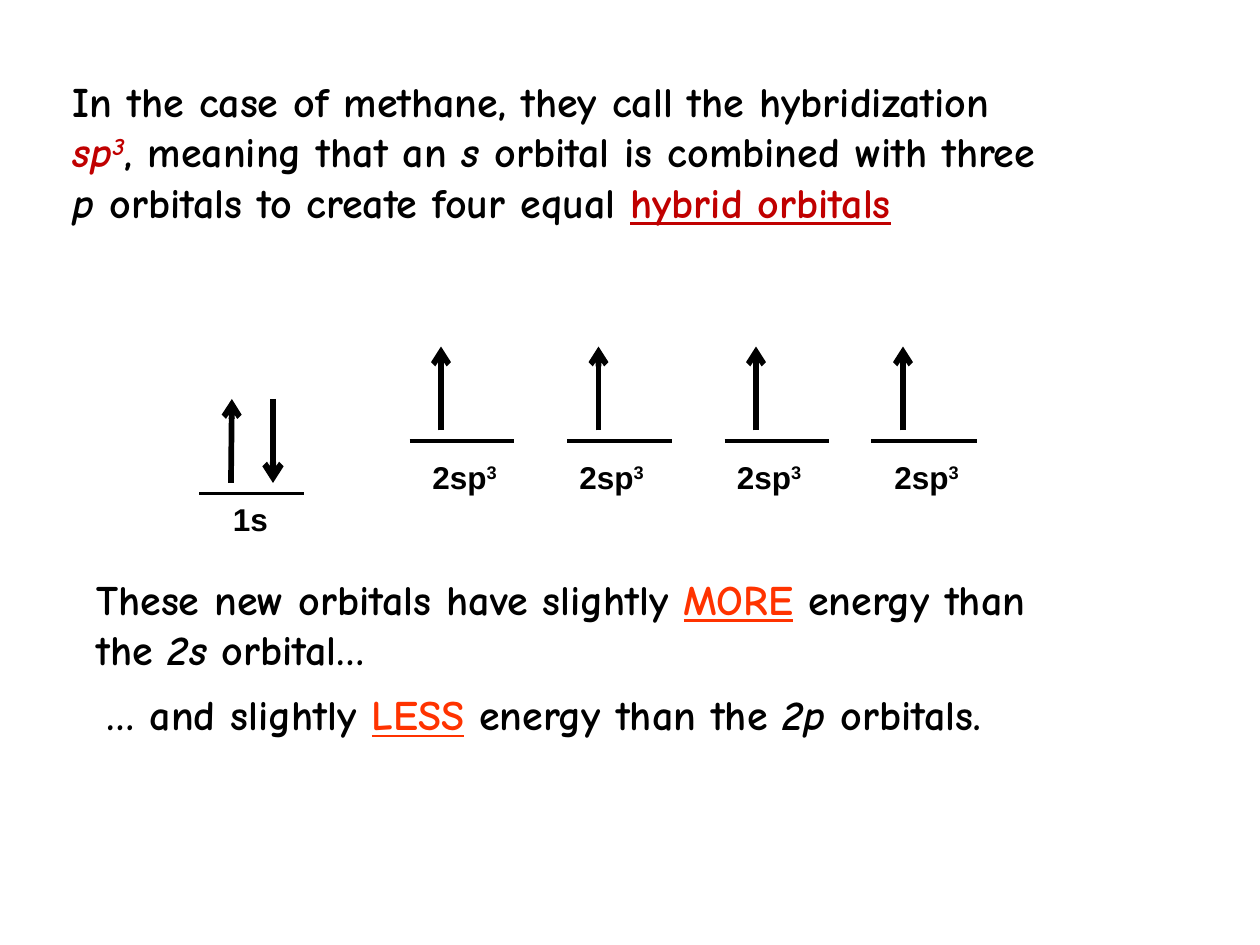
"""Build a slide on the sp³ hybrid orbitals of methane."""
from lxml import etree
from pptx import Presentation
from pptx.dml.color import RGBColor
from pptx.enum.shapes import MSO_CONNECTOR
from pptx.oxml.ns import qn
from pptx.util import Pt

STRAIGHT = MSO_CONNECTOR.STRAIGHT
COLORS = {"ink": "000000", "term": "C00000", "contrast": "FF3300"}


def add_text(box, font_name, size, lines):
    frame = slide.shapes.add_textbox(*[Pt(length) for length in box]).text_frame
    frame.word_wrap = True
    for index, line in enumerate(lines):
        paragraph = frame.paragraphs[0] if index == 0 else frame.add_paragraph()
        paragraph.font.name = font_name
        paragraph.font.size = Pt(size)
        paragraph.font.bold = True
        for text, color, *styles in line:
            run = paragraph.add_run()
            run.text = text
            run.font.color.rgb = RGBColor.from_string(COLORS[color])
            if "italic" in styles:
                run.font.italic = True
            if "underline" in styles:
                run.font.underline = True
            if "super" in styles:
                run.font.size = Pt(size)
                run._r.get_or_add_rPr().set("baseline", "30000")


def add_line(x1, y1, x2, y2, width, arrow=False):
    line = slide.shapes.add_connector(STRAIGHT, Pt(x1), Pt(y1), Pt(x2), Pt(y2))
    line.line.color.rgb = RGBColor.from_string(COLORS["ink"])
    line.line.width = Pt(width)
    if arrow:
        etree.SubElement(line.line._get_or_add_ln(), qn("a:tailEnd"), type="arrow")
    etree.SubElement(line._element.spPr, qn("a:effectLst"))


presentation = Presentation()
presentation.slide_width = Pt(720)
presentation.slide_height = Pt(540)
slide = presentation.slides.add_slide(presentation.slide_layouts[6])

add_text((34.5, 39.6, 647, 94.5), "Comic Neue", 24, [
    [("In the case of methane, they call the hybridization", "ink")],
    [("sp", "term", "italic"), ("3", "term", "italic", "super"),
     (", meaning that an ", "ink"), ("s", "ink", "italic"),
     (" orbital is combined with three", "ink")],
    [("p ", "ink", "italic"), ("orbitals to create four equal ", "ink"),
     ("hybrid orbitals", "term", "underline")],
])
add_text((48, 324, 626.5, 65.5), "Comic Neue", 24, [
    [("These new orbitals have slightly ", "ink"),
     ("MORE", "contrast", "underline"), (" energy than", "ink")],
    [("the ", "ink"), ("2s", "ink", "italic"), (" orbital…", "ink")],
])
add_text((54, 390, 619, 65.5), "Comic Neue", 24, [
    [("… and slightly ", "ink"), ("LESS", "contrast", "underline"),
     (" energy than the ", "ink"), ("2p ", "ink", "italic"), ("orbitals.", "ink")],
])

add_line(114, 282, 174, 282, 2)
add_text((126, 282, 42, 29), "Arial", 18, [[("1s", "ink")]])
add_line(132, 276, 132.5, 228, 3.25, arrow=True)
add_line(156, 228, 156, 276, 3.5, arrow=True)

for level_left, label_left in [(234, 240), (324, 324), (414, 414), (498, 504)]:
    electron_x = level_left + 18
    add_line(level_left, 252, level_left + 60, 252, 2)
    add_text((label_left, 258, 60, 29), "Arial", 18,
             [[("2sp", "ink"), ("3", "ink", "super")]])
    add_line(electron_x, 246, electron_x, 198, 3.25, arrow=True)

presentation.save("out.pptx")
